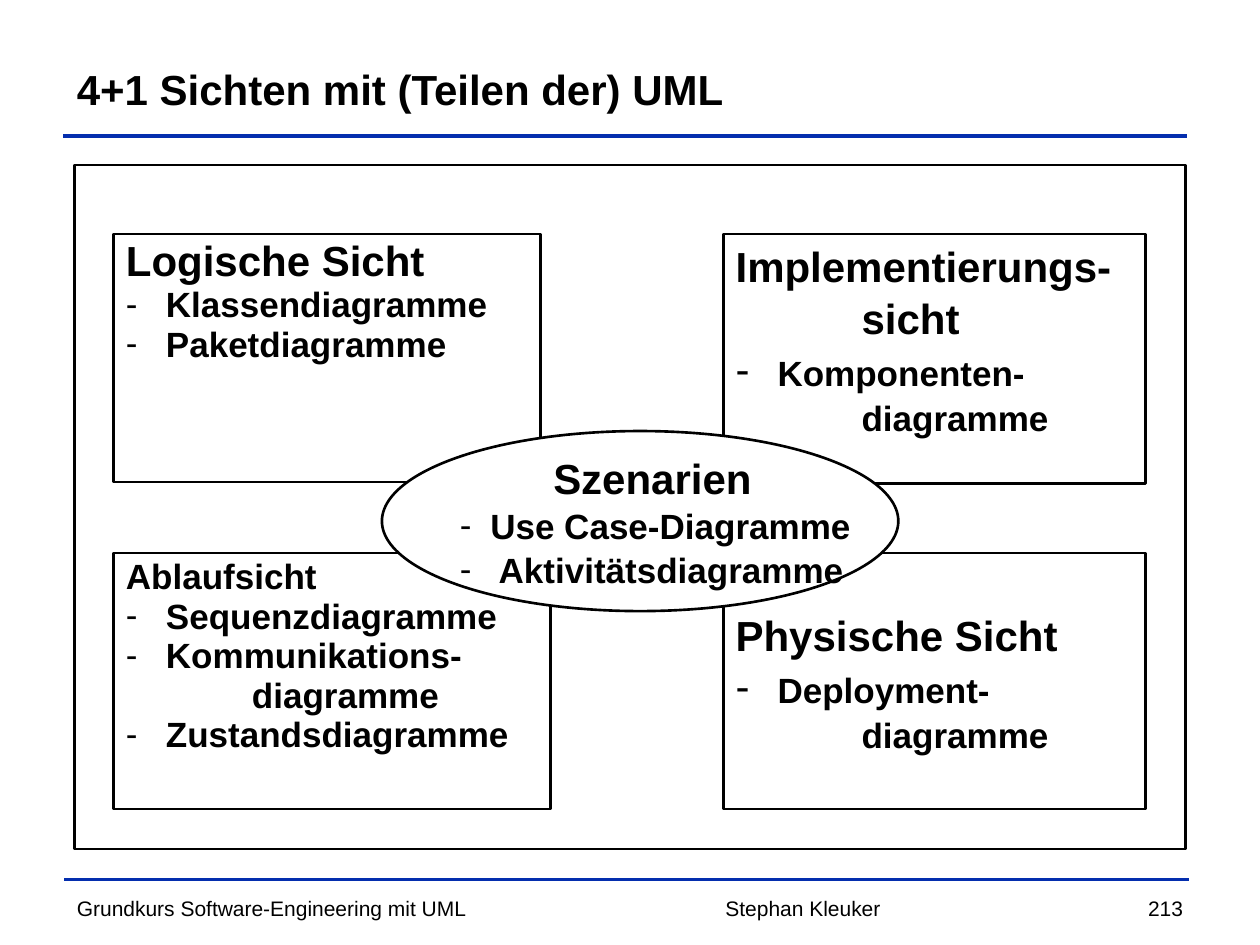
"""Builds the slide on the 4+1 views and the UML diagrams that describe them."""
from dataclasses import dataclass

from lxml import etree
from pptx import Presentation
from pptx.dml.color import RGBColor
from pptx.enum.shapes import MSO_CONNECTOR, MSO_SHAPE
from pptx.enum.text import MSO_ANCHOR, PP_ALIGN
from pptx.oxml.ns import qn
from pptx.util import Cm, Pt

RECTANGLE, ELLIPSE = MSO_SHAPE.RECTANGLE, MSO_SHAPE.OVAL
STRAIGHT = MSO_CONNECTOR.STRAIGHT
TOP, MIDDLE = MSO_ANCHOR.TOP, MSO_ANCHOR.MIDDLE
LEFT, CENTER, RIGHT = PP_ALIGN.LEFT, PP_ALIGN.CENTER, PP_ALIGN.RIGHT


@dataclass(frozen=True)
class Theme:
    font: str = "Arial"
    ink: RGBColor = RGBColor(0x00, 0x00, 0x00)
    paper: RGBColor = RGBColor(0xFF, 0xFF, 0xFF)
    rule: RGBColor = RGBColor(0x04, 0x2E, 0xAE)
    heading: int = 24
    body: int = 20
    footer: int = 12
    outline: float = 1.5
    rule_width: float = 2
    gap: float = 1


@dataclass(frozen=True)
class Box:
    left: float
    top: float
    width: float
    height: float

    def lengths(self) -> tuple:
        return Cm(self.left), Cm(self.top), Cm(self.width), Cm(self.height)


@dataclass(frozen=True)
class Line:
    runs: tuple
    bullet: bool = False
    indent: float = 0


@dataclass(frozen=True)
class View:
    box: Box
    lines: tuple
    outline: int = RECTANGLE
    spacing: float = 1
    inset_left: float = 0.25
    inset_top: float = 0.13
    anchor: int = TOP
    filled: bool = False


@dataclass(frozen=True)
class Label:
    text: str
    box: Box
    size: int
    align: int = LEFT
    bold: bool = False
    anchor: int = TOP


THEME = Theme()
HANG = 0.61
CONTINUATION = 2.54


def heading(text: str, indent: float = 0) -> Line:
    return Line(((text, THEME.heading),), indent=indent)


def body(text: str, indent: float = 0) -> Line:
    return Line(((text, THEME.body),), indent=indent)


def bullet(text: str) -> Line:
    return Line(((text, THEME.body),), True, HANG)


def wide_bullet(text: str) -> Line:
    return Line(((" ", THEME.heading), (text, THEME.body)), True, HANG)


COLUMN_LEFT, COLUMN_RIGHT = 2.29, 14.58
ROW_TOP, ROW_BOTTOM = 4.72, 11.15
VIEWS = (
    View(Box(COLUMN_LEFT, ROW_TOP, 8.61, 5), (
        heading("Logische Sicht"),
        bullet(" Klassendiagramme"),
        bullet(" Paketdiagramme"),
    ), spacing=0.9),
    View(Box(COLUMN_LEFT, ROW_BOTTOM, 8.81, 5.16), (
        body("Ablaufsicht"),
        bullet(" Sequenzdiagramme"),
        bullet(" Kommunikations-"),
        body("diagramme", CONTINUATION),
        bullet(" Zustandsdiagramme"),
    ), spacing=0.9),
    View(Box(COLUMN_RIGHT, ROW_BOTTOM, 8.51, 5.16), (
        heading("Physische Sicht"),
        wide_bullet("Deployment-"),
        body("diagramme", CONTINUATION),
    ), inset_top=1.14),
    View(Box(COLUMN_RIGHT, ROW_TOP, 8.51, 5.03), (
        heading("Implementierungs-"),
        heading("sicht", CONTINUATION),
        wide_bullet("Komponenten-"),
        body("diagramme", CONTINUATION),
    )),
    View(Box(7.7, 8.69, 10.41, 3.63), (
        heading("Szenarien", 1.88),
        bullet("Use Case-Diagramme"),
        bullet(" Aktivitätsdiagramme"),
    ), outline=ELLIPSE, inset_left=0.05, anchor=MIDDLE, filled=True),
    View(Box(1.5, 3.33, 22.4, 13.79), ()),
)
FOOTER_TOP, FOOTER_HEIGHT = 17.93, 0.74
LABELS = (
    Label("4+1 Sichten mit (Teilen der) UML", Box(1.3, 0.71, 22.61, 2.16),
          THEME.heading, bold=True, anchor=MIDDLE),
    Label("Grundkurs Software-Engineering mit UML",
          Box(1.3, FOOTER_TOP, 8.79, FOOTER_HEIGHT), THEME.footer),
    Label("Stephan Kleuker", Box(13.69, FOOTER_TOP, 5, FOOTER_HEIGHT), THEME.footer, CENTER),
    Label("213", Box(18.11, FOOTER_TOP, 5.99, FOOTER_HEIGHT), THEME.footer, RIGHT),
)
RULES = ((1.27, 2.74), (1.3, 17.73))
RULE_LENGTH = 22.66


def add_run(paragraph, text: str, size: int, bold: bool) -> None:
    """Appends one run in the theme font."""
    run = paragraph.add_run()
    run.text = text
    run.font.name, run.font.size, run.font.bold = THEME.font, Pt(size), bold
    run.font.color.rgb = THEME.ink


def indent_paragraph(paragraph, line: Line) -> None:
    """Sets the left margin and, for bullets, the hanging dash."""
    properties = paragraph._p.get_or_add_pPr()
    properties.set("marL", str(Cm(line.indent)))
    properties.set("indent", str(-Cm(line.indent) if line.bullet else 0))
    if line.bullet:
        etree.SubElement(properties, qn("a:buFont")).set("typeface", THEME.font)
        etree.SubElement(properties, qn("a:buChar")).set("char", "-")


def draw_view(slide, view: View) -> None:
    """Draws an outlined shape with its heading and diagram list."""
    shape = slide.shapes.add_shape(view.outline, *view.box.lengths())
    shape.shadow.inherit = False
    shape.line.color.rgb, shape.line.width = THEME.ink, Pt(THEME.outline)
    if view.filled:
        shape.fill.solid()
        shape.fill.fore_color.rgb = THEME.paper
    else:
        shape.fill.background()
    frame = shape.text_frame
    frame.word_wrap, frame.vertical_anchor = False, view.anchor
    frame.margin_left, frame.margin_top = Cm(view.inset_left), Cm(view.inset_top)
    for index, line in enumerate(view.lines):
        paragraph = frame.add_paragraph() if index else frame.paragraphs[0]
        paragraph.alignment, paragraph.line_spacing = LEFT, view.spacing
        paragraph.space_before = Pt(THEME.gap)
        indent_paragraph(paragraph, line)
        for text, size in line.runs:
            add_run(paragraph, text, size, True)


def draw_label(slide, label: Label) -> None:
    """Draws a single line of free text."""
    frame = slide.shapes.add_textbox(*label.box.lengths()).text_frame
    frame.word_wrap, frame.vertical_anchor = True, label.anchor
    paragraph = frame.paragraphs[0]
    paragraph.alignment = label.align
    add_run(paragraph, label.text, label.size, label.bold)


def draw_rule(slide, left: float, top: float) -> None:
    """Draws a horizontal rule across the slide."""
    rule = slide.shapes.add_connector(
        STRAIGHT, Cm(left), Cm(top), Cm(left + RULE_LENGTH), Cm(top))
    rule.line.color.rgb, rule.line.width = THEME.rule, Pt(THEME.rule_width)
    etree.SubElement(rule._element.spPr, qn("a:effectLst"))


def main() -> None:
    """Builds and saves the presentation."""
    presentation = Presentation()
    presentation.slide_width, presentation.slide_height = Cm(25.4), Cm(19.05)
    slide = presentation.slides.add_slide(presentation.slide_layouts[6])
    for left, top in RULES:
        draw_rule(slide, left, top)
    for label in LABELS:
        draw_label(slide, label)
    for view in VIEWS:
        draw_view(slide, view)
    presentation.save("out.pptx")


if __name__ == "__main__":
    main()
